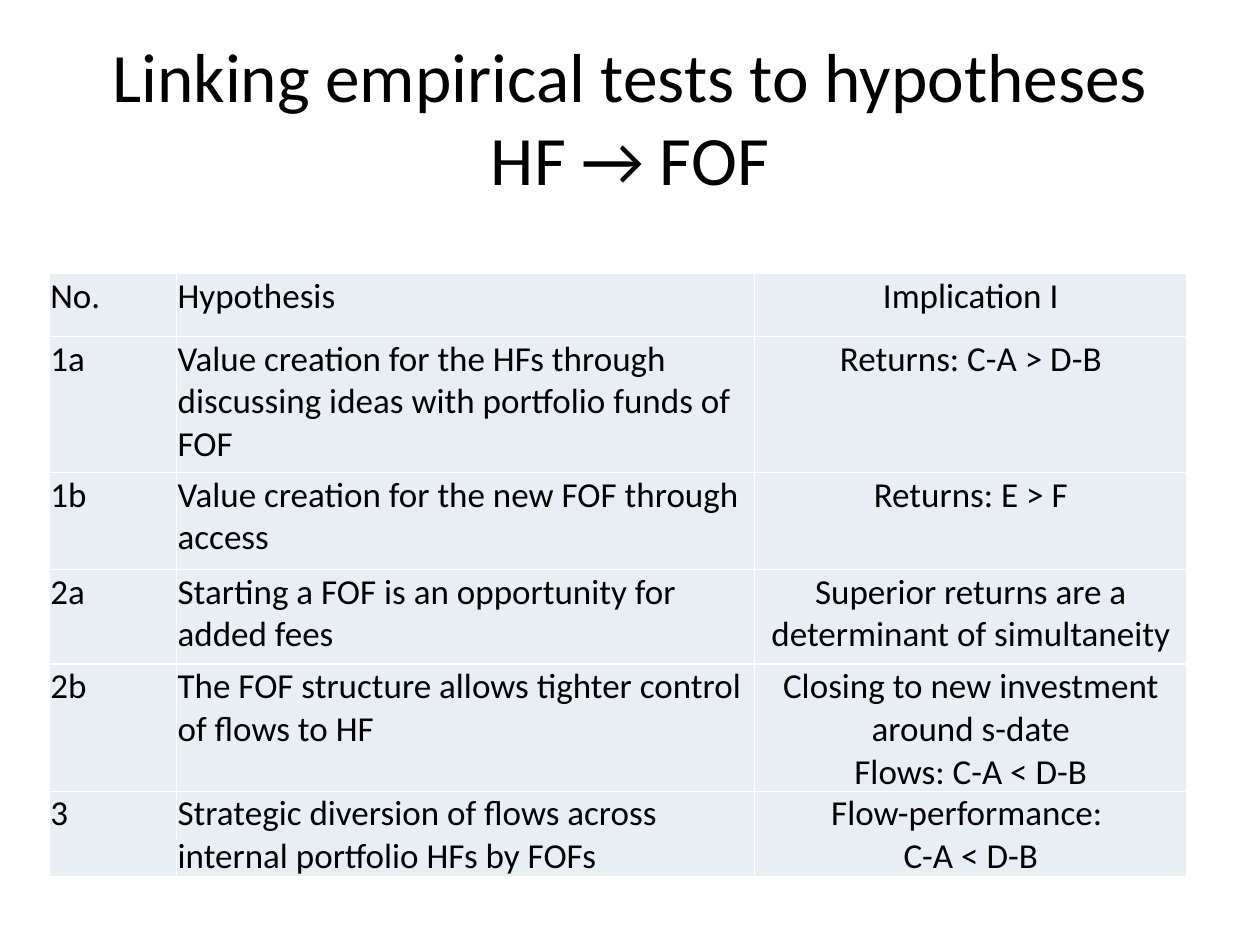
from lxml import etree
from pptx import Presentation
from pptx.dml.color import RGBColor
from pptx.enum.text import MSO_ANCHOR, PP_ALIGN
from pptx.oxml.ns import qn
from pptx.util import Inches, Pt

LEFT, CENTER = PP_ALIGN.LEFT, PP_ALIGN.CENTER
TOP, MIDDLE = MSO_ANCHOR.TOP, MSO_ANCHOR.MIDDLE
FONT, INK, PALE, WHITE = "Calibri", "000000", "E9EDF4", "FFFFFF"

TITLE = "Linking empirical tests to hypotheses\vHF → FOF"
WIDTHS = [1.01, 4.59, 3.43]
HEIGHTS = [0.5, 1.08, 0.77, 0.75, 0.58, 0.58]
ALIGNS = [LEFT, LEFT, CENTER]
ROWS = [
    ("No.", "Hypothesis", "Implication I"),
    ("1a", "Value creation for the HFs through discussing ideas with "
     "portfolio funds of FOF", "Returns: C-A > D-B"),
    ("1b", "Value creation for the new FOF through access",
     "Returns: E > F"),
    ("2a", "Starting a FOF is an opportunity for added fees",
     "Superior returns are a determinant of simultaneity"),
    ("2b", "The FOF structure allows tighter control of flows to HF",
     "Closing to new investment around s-date\nFlows: C-A < D-B"),
    ("3", "Strategic diversion of flows across internal portfolio HFs by FOFs",
     "Flow-performance: \vC-A < D-B"),
]


def color(code):
    return RGBColor.from_string(code)


def write(frame, text, size, align):
    """Fill a text frame: newlines split paragraphs, \\v breaks lines."""
    frame.text = text
    frame.word_wrap = True
    form = {"name": FONT, "size": Pt(size)}
    for para in frame.paragraphs:
        para.alignment = align
        for run in para.runs:
            for key, value in form.items():
                setattr(run.font, key, value)
            run.font.color.rgb = color(INK)


def add_title(slide):
    box = slide.shapes.add_textbox(
        Inches(0.5), Inches(0.3), Inches(9), Inches(1.25))
    write(box.text_frame, TITLE, 39.6, CENTER)
    box.text_frame.vertical_anchor = MIDDLE


def add_edges(cell):
    props = cell._tc.get_or_add_tcPr()
    for side in ("lnL", "lnR", "lnT", "lnB"):
        line = etree.SubElement(props, qn(f"a:{side}"), w=str(Pt(1)))
        fill = etree.SubElement(line, qn("a:solidFill"))
        etree.SubElement(fill, qn("a:srgbClr"), val=WHITE)


def style_cell(cell, text, align):
    form = {
        "margin_left": Inches(0.01), "margin_right": Inches(0.01),
        "margin_top": Inches(0.01), "margin_bottom": 0,
        "vertical_anchor": TOP,
    }
    for key, value in form.items():
        setattr(cell, key, value)
    add_edges(cell)
    cell.fill.solid()
    cell.fill.fore_color.rgb = color(PALE)
    write(cell.text_frame, text, 20, align)


def add_grid(slide):
    table = slide.shapes.add_table(
        len(ROWS), len(WIDTHS), Inches(0.39), Inches(2.17),
        Inches(sum(WIDTHS)), Inches(sum(HEIGHTS))).table
    for col, width in zip(table.columns, WIDTHS):
        col.width = Inches(width)
    for row, height, texts in zip(table.rows, HEIGHTS, ROWS):
        row.height = Inches(height)
        for cell, text, align in zip(row.cells, texts, ALIGNS):
            style_cell(cell, text, align)
    table.first_row = table.horz_banding = False


def main():
    deck = Presentation()
    deck.slide_width, deck.slide_height = Inches(10), Inches(7.5)
    slide = deck.slides.add_slide(deck.slide_layouts[6])
    add_title(slide)
    add_grid(slide)
    deck.save("out.pptx")


if __name__ == "__main__":
    main()
